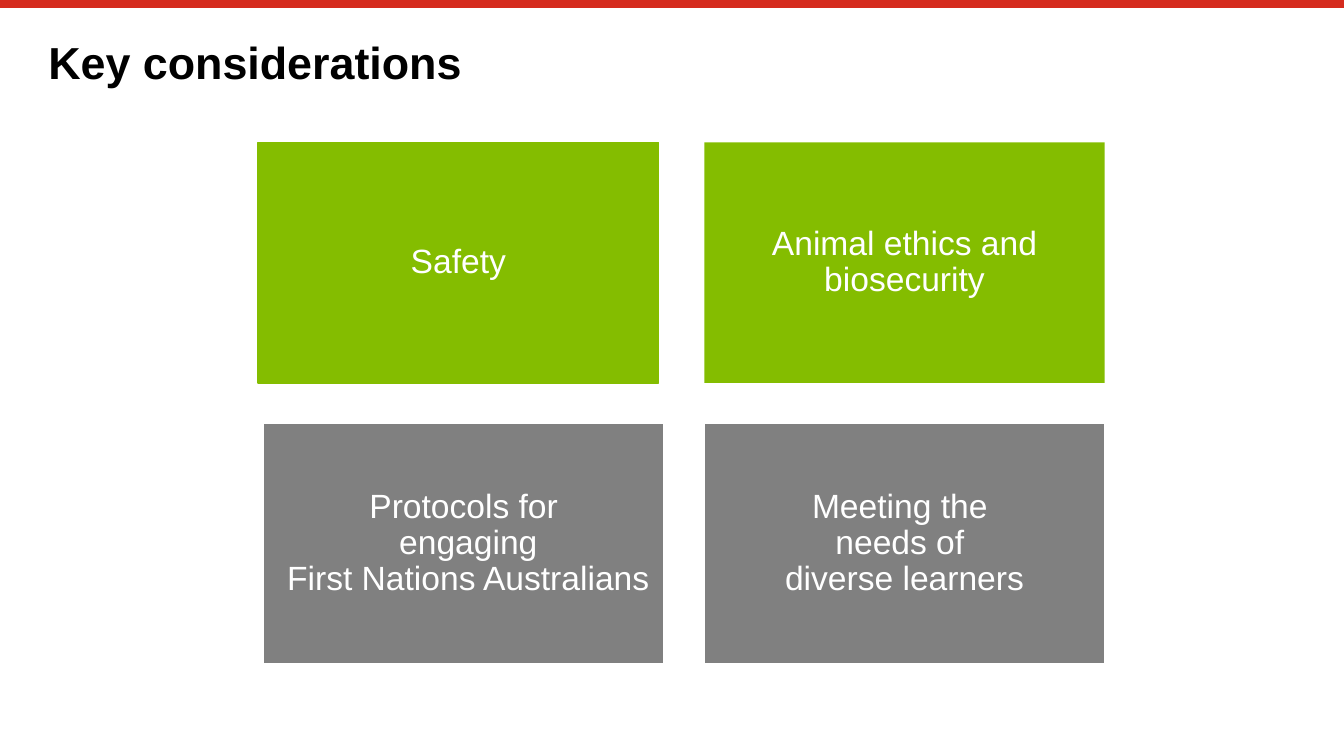
from lxml.etree import SubElement
from pptx import Presentation
from pptx.dml.color import RGBColor
from pptx.enum.shapes import MSO_CONNECTOR, MSO_SHAPE
from pptx.enum.text import MSO_ANCHOR, PP_ALIGN
from pptx.oxml.ns import qn
from pptx.util import Inches, Pt

COLORS = {"red": "D52B1E", "green": "84BD00", "grey": "808080",
          "white": "FFFFFF", "black": "000000"}


def color(name):
    return RGBColor.from_string(COLORS[name])


def format_text(shape, inset, anchor, align, size, ink, bold):
    frame = shape.text_frame
    frame.word_wrap = True
    frame.vertical_anchor = anchor
    frame.margin_left = frame.margin_right = Inches(inset)
    frame.margin_top = frame.margin_bottom = Inches(inset)
    for para in frame.paragraphs:
        para.alignment = align
        para.line_spacing = 0.9
        for span in para.runs:
            span.font.name = "Arial"
            span.font.size = Pt(size)
            span.font.bold = bold
            span.font.color.rgb = color(ink)


deck = Presentation()
deck.slide_width = Inches(10)
deck.slide_height = Inches(10 * 9 / 16)
page = deck.slides.add_slide(deck.slide_layouts[5])

top_rule = page.shapes.add_connector(
    MSO_CONNECTOR.STRAIGHT, 0, Inches(0.03), Inches(10), Inches(0.03))
top_rule.line.color.rgb = color("red")
top_rule.line.width = Pt(4.2)
SubElement(top_rule._element.spPr, qn("a:effectLst"))

title = page.shapes.title
title.left, title.top = Inches(0.36), Inches(0.3)
title.width, title.height = Inches(9.29), Inches(0.39)
title.text_frame.text = "Key considerations"
format_text(title, 0, MSO_ANCHOR.TOP, PP_ALIGN.LEFT, 24, "black", True)

considerations = [
    (1.92, 1.06, "green", "green", "Safety"),
    (5.24, 1.06, "green", None, "Animal ethics and biosecurity"),
    (1.96, 3.15, "grey", "white",
     "Protocols for\v engaging\v First Nations Australians"),
    (5.24, 3.15, "grey", "white",
     "Meeting the \vneeds of \vdiverse learners"),
]
for left, top, fill, outline, label in considerations:
    box = page.shapes.add_shape(MSO_SHAPE.RECTANGLE, Inches(left), Inches(top),
                                Inches(2.98), Inches(1.79))
    box.shadow.inherit = False
    box.fill.solid()
    box.fill.fore_color.rgb = color(fill)
    if outline:
        box.line.color.rgb = color(outline)
        box.line.width = Pt(1)
    else:
        box.line.fill.background()
    box.text_frame.text = label
    format_text(box, 0.07, MSO_ANCHOR.MIDDLE, PP_ALIGN.CENTER, 18, "white", False)

deck.save("out.pptx")
